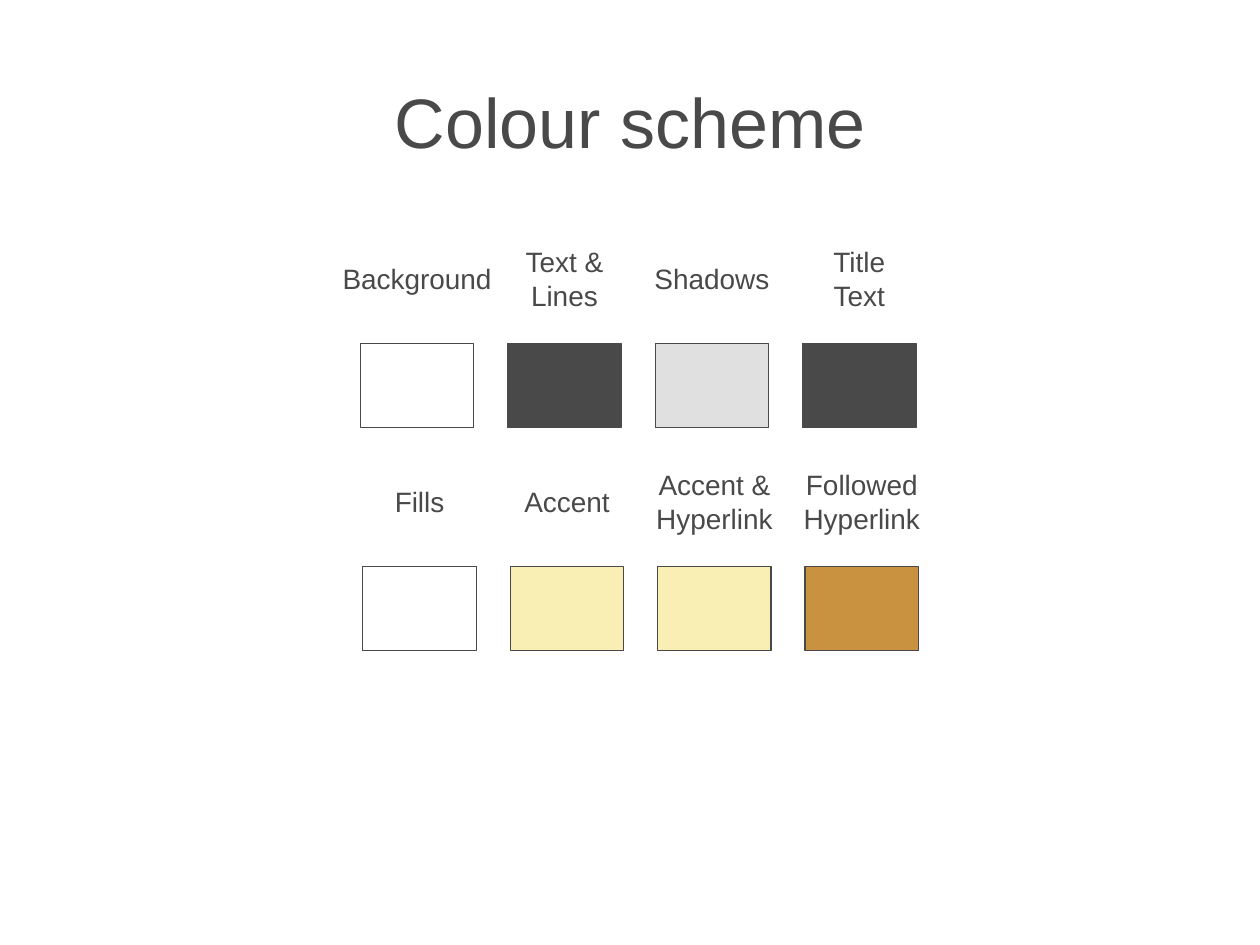
from pptx import Presentation
from pptx.dml.color import RGBColor
from pptx.enum.shapes import MSO_SHAPE
from pptx.enum.text import MSO_ANCHOR, MSO_AUTO_SIZE, PP_ALIGN
from pptx.util import Inches, Pt

RECTANGLE = MSO_SHAPE.RECTANGLE
MIDDLE = MSO_ANCHOR.MIDDLE
CENTER = PP_ALIGN.CENTER
GROW = MSO_AUTO_SIZE.SHAPE_TO_FIT_TEXT

COLORS = {
    "background": "FFFFFF",
    "text": "494949",
    "shadow": "E0E0E0",
    "accent": "F9EEB4",
    "followed": "C89241",
}

SWATCH_ROWS = [
    [
        ("Background", 1.39, None),
        ("Text &\nLines", 0.84, "text"),
        ("Shadows", 1.11, "shadow"),
        ("Title\vText", 0.63, "text"),
    ],
    [
        ("Fills", 0.59, "background"),
        ("Accent", 0.88, "accent"),
        ("Accent &\nHyperlink", 1.12, "accent"),
        ("Followed\nHyperlink", 1.12, "followed"),
    ],
]


class SchemeSlide:
    font_name = "Arial"
    title_size = 40
    label_size = 16
    first_column, column_step, row_shift = 3.31, 1.17, 0.02
    first_row, row_step = 3.06, 1.77
    swatch_width, swatch_height = 0.9, 0.67
    label_rise = 0.85
    line_height, label_padding = 0.27, 0.1

    def __init__(self, presentation):
        self.slide = presentation.slides.add_slide(presentation.slide_layouts[6])
        background = self.slide.background.fill
        background.solid()
        background.fore_color.rgb = self.color("background")

    def color(self, name):
        return RGBColor.from_string(COLORS[name])

    def cell_center(self, column, row):
        x = self.first_column + column * self.column_step + row * self.row_shift
        return x, self.first_row + row * self.row_step

    def box(self, x, y, width, height):
        return [Inches(v) for v in (x - width / 2, y - height / 2, width, height)]

    def text(self, text, box, size, wrap):
        frame = self.slide.shapes.add_textbox(*box).text_frame
        frame.word_wrap = wrap
        frame.vertical_anchor = MIDDLE
        frame.margin_left = frame.margin_right = 0
        frame.text = text
        for paragraph in frame.paragraphs:
            paragraph.alignment = CENTER
            paragraph.font.name = self.font_name
            paragraph.font.size = Pt(size)
            paragraph.font.color.rgb = self.color("text")
        return frame

    def title(self, text):
        self.text(text, self.box(5, 0.96, 9, 1.25), self.title_size, True)

    def label(self, text, width, column, row):
        x, y = self.cell_center(column, row)
        lines = len(text.splitlines())
        height = lines * self.line_height + self.label_padding
        box = self.box(x, y - self.label_rise, width, height)
        self.text(text, box, self.label_size, False).auto_size = GROW

    def swatch(self, fill, column, row):
        x, y = self.cell_center(column, row)
        box = self.box(x, y, self.swatch_width, self.swatch_height)
        shape = self.slide.shapes.add_shape(RECTANGLE, *box)
        shape.shadow.inherit = False
        if fill:
            shape.fill.solid()
            shape.fill.fore_color.rgb = self.color(fill)
        else:
            shape.fill.background()
        shape.line.color.rgb = self.color("text")
        shape.line.width = Pt(0.75)


def main():
    presentation = Presentation()
    presentation.slide_width = Inches(10)
    presentation.slide_height = Inches(7.5)
    scheme = SchemeSlide(presentation)
    scheme.title("Colour scheme")
    for row, entries in enumerate(SWATCH_ROWS):
        for column, (name, width, fill) in enumerate(entries):
            scheme.swatch(fill, column, row)
            scheme.label(name, width, column, row)
    presentation.save("out.pptx")


if __name__ == "__main__":
    main()
